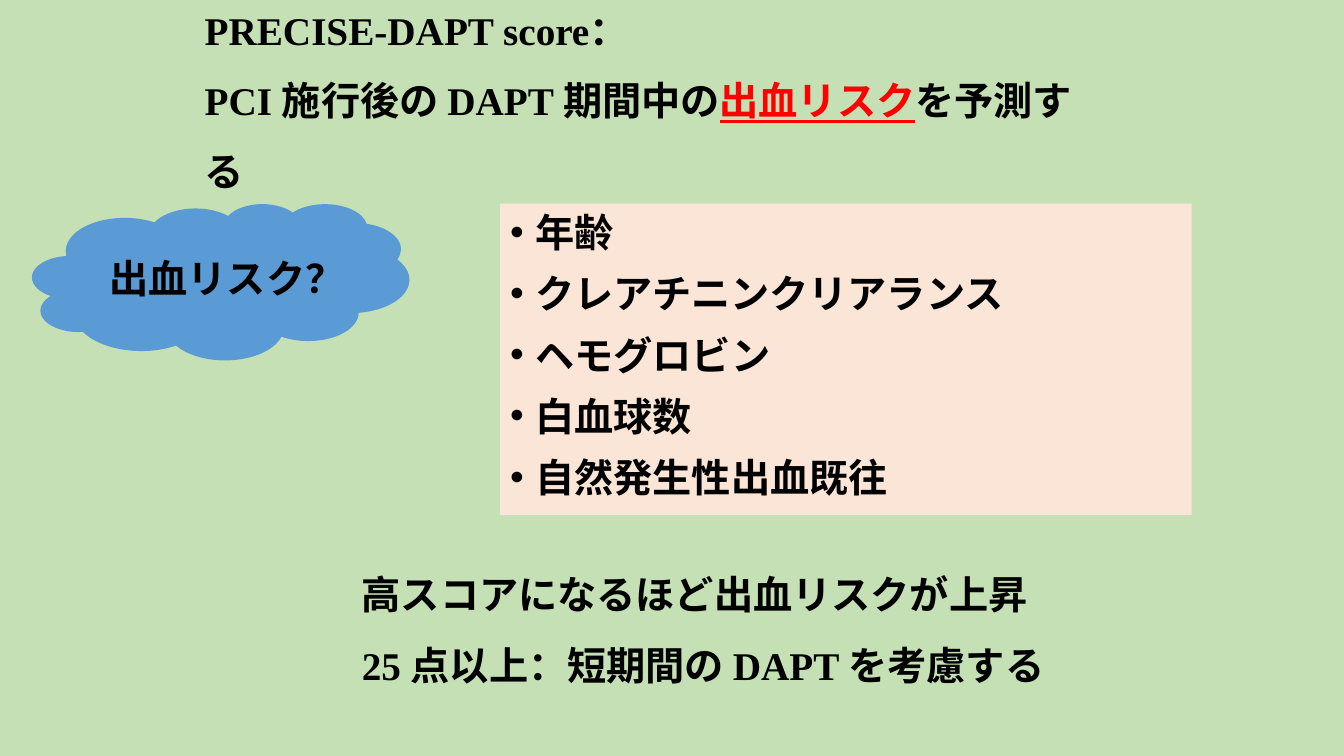
from dataclasses import dataclass

from lxml.etree import SubElement
from pptx import Presentation
from pptx.dml.color import RGBColor
from pptx.enum.shapes import MSO_SHAPE
from pptx.enum.text import MSO_ANCHOR, MSO_AUTO_SIZE, PP_ALIGN
from pptx.oxml.ns import qn
from pptx.util import Inches, Pt


@dataclass(frozen=True)
class Theme:
    background: RGBColor = RGBColor(0xC5, 0xE0, 0xB4)
    panel: RGBColor = RGBColor(0xFB, 0xE5, 0xD6)
    cloud: RGBColor = RGBColor(0x5B, 0x9B, 0xD5)
    ink: RGBColor = RGBColor(0, 0, 0)
    alert: RGBColor = RGBColor(0xFF, 0, 0)
    size: Pt = Pt(28)
    serif: str = "Times New Roman"
    sans: str = "Calibri"


THEME = Theme()


def place(element, left, top, width, height):
    element.left, element.top = Inches(left), Inches(top)
    element.width, element.height = Inches(width), Inches(height)


def fill_with(element, color):
    element.fill.solid()
    element.fill.fore_color.rgb = color


def style(paragraph, typeface=THEME.serif, align=PP_ALIGN.LEFT, spacing=1.0):
    paragraph.alignment = align
    paragraph.line_spacing = spacing
    paragraph.font.name = typeface
    paragraph.font.size = THEME.size
    paragraph.font.bold = True
    paragraph.font.color.rgb = THEME.ink


def add_bullet(paragraph):
    properties = paragraph._p.get_or_add_pPr()
    properties.set("marL", str(Inches(0.25)))
    properties.set("indent", str(-Inches(0.25)))
    SubElement(properties, qn("a:buFont")).set("typeface", "Arial")
    SubElement(properties, qn("a:buChar")).set("char", "•")
    defaults = properties.find(qn("a:defRPr"))
    properties.append(defaults)


def write_lines(frame, lines):
    frame.text = "\n".join(lines)
    frame.word_wrap = True
    return frame.paragraphs


def write_title(title):
    place(title, 1.93, 0, 9.18, 1.75)
    frame = title.text_frame
    frame.auto_size = MSO_AUTO_SIZE.NONE
    frame.vertical_anchor = MSO_ANCHOR.MIDDLE
    heading = frame.paragraphs[0]
    style(heading, spacing=1.5)
    heading.add_run().text = "PRECISE-DAPT score："
    heading.add_line_break()
    heading.add_run().text = "PCI 施行後の DAPT 期間中の"
    bleeding_risk = heading.add_run()
    bleeding_risk.text = "出血リスク"
    bleeding_risk.font.color.rgb = THEME.alert
    bleeding_risk.font.underline = True
    heading.add_run().text = "を予測する"


def write_factors(body, factors):
    place(body, 4.96, 2.02, 6.86, 3.09)
    fill_with(body, THEME.panel)
    body.text_frame.auto_size = MSO_AUTO_SIZE.NONE
    for factor in write_lines(body.text_frame, factors):
        style(factor)
        factor.space_before = Pt(10)
        add_bullet(factor)


def add_conclusion(slide, lines):
    conclusion = slide.shapes.add_textbox(
        Inches(3.49), Inches(5.38), Inches(8.33), Inches(1.51))
    for line in write_lines(conclusion.text_frame, lines):
        style(line, spacing=1.5)
    conclusion.text_frame.auto_size = MSO_AUTO_SIZE.SHAPE_TO_FIT_TEXT


def add_question_cloud(slide, question):
    cloud = slide.shapes.add_shape(
        MSO_SHAPE.CLOUD, Inches(0.32), Inches(2.02), Inches(3.74), Inches(1.55))
    cloud.shadow.inherit = False
    fill_with(cloud, THEME.cloud)
    cloud.line.fill.background()
    cloud.text_frame.vertical_anchor = MSO_ANCHOR.MIDDLE
    for line in write_lines(cloud.text_frame, [question]):
        style(line, THEME.sans, PP_ALIGN.CENTER)


def main():
    deck = Presentation()
    deck.slide_width, deck.slide_height = Inches(13.33), Inches(7.5)
    slide = deck.slides.add_slide(deck.slide_layouts[1])
    fill_with(slide.background, THEME.background)

    write_title(slide.shapes.title)
    write_factors(slide.placeholders[1], [
        "年齢",
        "クレアチニンクリアランス",
        "ヘモグロビン",
        "白血球数",
        "自然発生性出血既往",
    ])
    add_conclusion(slide, [
        "高スコアになるほど出血リスクが上昇",
        "25 点以上：短期間の DAPT を考慮する",
    ])
    add_question_cloud(slide, "出血リスク？")
    deck.save("out.pptx")


if __name__ == "__main__":
    main()
